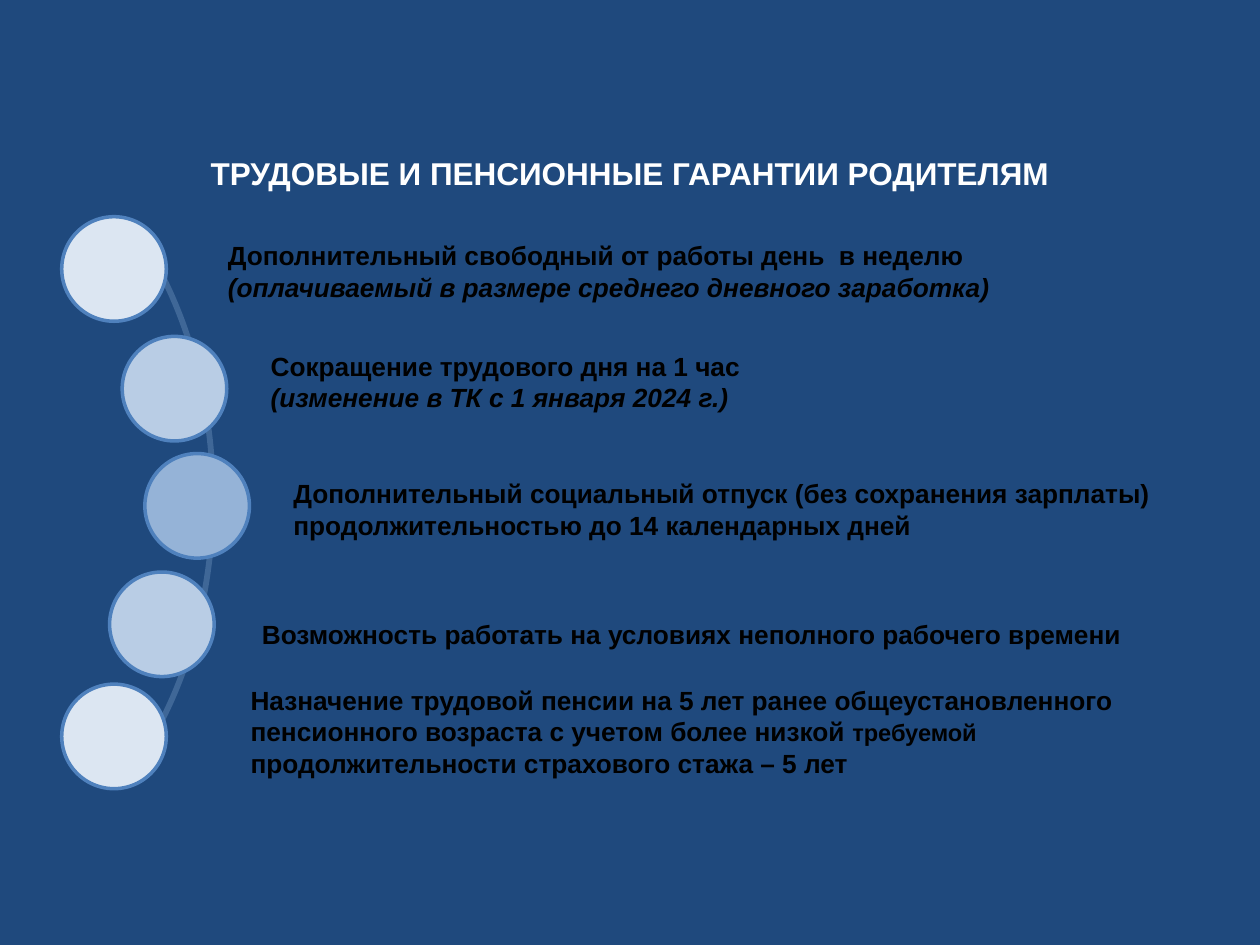
from dataclasses import dataclass

from pptx import Presentation
from pptx.dml.color import RGBColor
from pptx.enum.shapes import MSO_SHAPE
from pptx.enum.text import MSO_ANCHOR, PP_ALIGN
from pptx.util import Inches, Pt

# Grid of square cells: 100 columns by 75 rows
CELL = Inches(0.1)
COLUMNS, ROWS = 100, 75
CIRCLE_SIZE = 8.3
LINE_ROWS = 2.55
FONT = "Arial"
NAVY, WHITE, BLACK = "1F497D", "FFFFFF", "000000"
ARC_LINE, CIRCLE_LINE = "3F6797", "4F81BD"
PALE, LIGHT, MEDIUM = "DCE6F2", "B9CDE5", "95B3D7"


@dataclass
class Phrase:
    text: str
    italic: bool = False
    size: float = 15
    break_before: bool = False


@dataclass
class Guarantee:
    circle_column: float
    circle_row: float
    fill: str
    text_column: float
    text_row: float
    text_columns: float
    lines: int
    phrases: list[Phrase]


GUARANTEES = [
    Guarantee(4.9, 17.2, PALE, 17.1, 18.5, 75.3, 2, [
        Phrase("Дополнительный свободный от работы день  в неделю "),
        Phrase("(оплачиваемый в размере среднего дневного заработка)", italic=True)]),
    Guarantee(9.7, 26.7, LIGHT, 20.5, 27.3, 70.3, 2, [
        Phrase("Сокращение трудового дня на 1 час "),
        Phrase("(изменение в ТК с 1 января 2024 г.)", italic=True, break_before=True)]),
    Guarantee(11.5, 36, MEDIUM, 22.3, 37.4, 72, 2, [
        Phrase("Дополнительный социальный отпуск (без сохранения зарплаты) "
               "продолжительностью до 14 календарных дней")]),
    Guarantee(8.7, 45.4, LIGHT, 19.8, 48.6, 70.3, 1, [
        Phrase("Возможность работать на условиях неполного рабочего времени")]),
    Guarantee(4.9, 54.3, PALE, 18.9, 53.8, 73.7, 3, [
        Phrase("Назначение трудовой пенсии на 5 лет ранее общеустановленного "
               "пенсионного возраста с учетом более низкой "),
        Phrase("требуемой", size=13.5),
        Phrase(" продолжительности страхового стажа – 5 лет")]),
]


def color(value: str) -> RGBColor:
    return RGBColor.from_string(value)


def cells(*counts: float) -> list[int]:
    return [round(count * CELL) for count in counts]


def add_outline(slide, kind, box: list[int], line: str, fill: str | None = None):
    shape = slide.shapes.add_shape(kind, *box)
    shape.shadow.inherit = False
    if fill:
        shape.fill.solid()
        shape.fill.fore_color.rgb = color(fill)
    else:
        shape.fill.background()
    shape.line.color.rgb = color(line)
    shape.line.width = Pt(2)
    return shape


def add_text(slide, box: list[int], phrases: list[Phrase], text_color: str):
    frame = slide.shapes.add_textbox(*box).text_frame
    frame.word_wrap = True
    paragraph = frame.paragraphs[0]
    paragraph.font.name = FONT
    paragraph.font.bold = True
    paragraph.font.color.rgb = color(text_color)
    for phrase in phrases:
        if phrase.break_before:
            paragraph.add_line_break()
        run = paragraph.add_run()
        run.text = phrase.text
        # Explicit run formatting keeps mixed sizes and styles apart
        run.font.name = FONT
        run.font.bold = True
        run.font.size = Pt(phrase.size)
        run.font.italic = phrase.italic
        run.font.color.rgb = color(text_color)
    return frame


def add_title(slide) -> None:
    title = Phrase("ТРУДОВЫЕ И ПЕНСИОННЫЕ ГАРАНТИИ РОДИТЕЛЯМ", size=18)
    frame = add_text(slide, cells(0, 9.7, COLUMNS, 8.1), [title], WHITE)
    frame.vertical_anchor = MSO_ANCHOR.MIDDLE
    frame.margin_left = frame.margin_right = Inches(0.07)
    frame.margin_top = frame.margin_bottom = Inches(0.04)
    frame.paragraphs[0].alignment = PP_ALIGN.CENTER


def add_arc(slide) -> None:
    arc = add_outline(slide, MSO_SHAPE.BLOCK_ARC, cells(-29, 8.3, 46, 62.4), ARC_LINE)
    # From 315 to 45 degrees, almost without thickness
    for index, value in enumerate((189, 27, 0.004)):
        arc.adjustments[index] = value


def add_guarantee(slide, item: Guarantee) -> None:
    circle = cells(item.circle_column, item.circle_row, CIRCLE_SIZE, CIRCLE_SIZE)
    add_outline(slide, MSO_SHAPE.OVAL, circle, CIRCLE_LINE, item.fill)
    box = cells(item.text_column, item.text_row, item.text_columns,
                1 + item.lines * LINE_ROWS)
    add_text(slide, box, item.phrases, BLACK)


def main() -> None:
    presentation = Presentation()
    presentation.slide_width, presentation.slide_height = cells(COLUMNS, ROWS)
    slide = presentation.slides.add_slide(presentation.slide_layouts[6])
    slide.background.fill.solid()
    slide.background.fill.fore_color.rgb = color(NAVY)

    # Title, connecting arc, then one circle and text per guarantee
    add_title(slide)
    add_arc(slide)
    for item in GUARANTEES:
        add_guarantee(slide, item)
    presentation.save("out.pptx")


if __name__ == "__main__":
    main()
